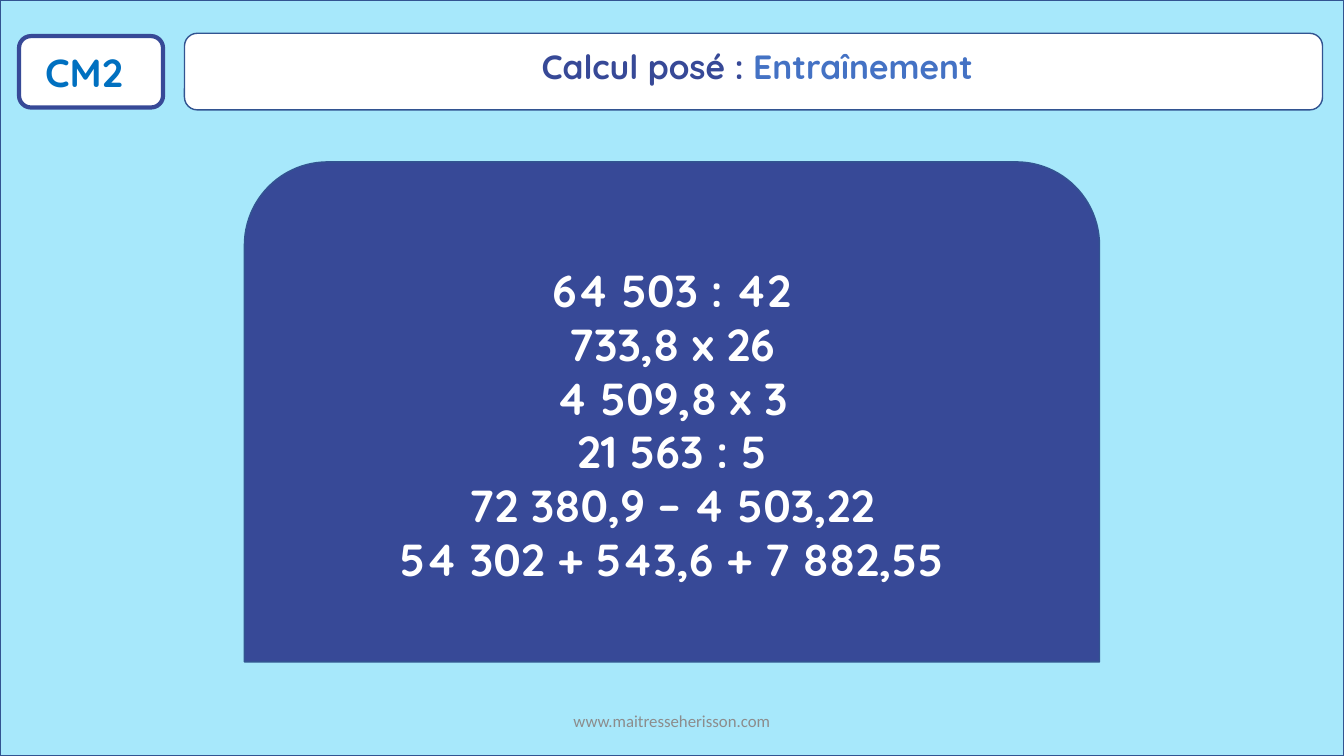
from pptx import Presentation
from pptx.dml.color import RGBColor
from pptx.enum.shapes import MSO_SHAPE
from pptx.enum.text import MSO_ANCHOR, MSO_AUTO_SIZE, PP_ALIGN
from pptx.util import Cm, Pt

LEVEL = "CM2"
TITLE = ["Calcul posé : ", "Entraînement"]
SITE = "www.maitresseherisson.com"
CALCULATIONS = [
    "64 503 : 42",
    "733,8 x 26",
    "4 509,8 x 3",
    "21 563 : 5",
    "72 380,9 – 4 503,22",
    "54 302 + 543,6 + 7 882,55",
]

WIDTH, HEIGHT = 33.87, 19.05
BOARD_WIDTH = 21.55

SKY = RGBColor(0xA7, 0xE8, 0xFB)
WHITE = RGBColor(0xFF, 0xFF, 0xFF)
NAVY = RGBColor(0x37, 0x49, 0x97)
OUTLINE = RGBColor(0x32, 0x54, 0x91)
BLUE = RGBColor(0x44, 0x72, 0xC4)
LEVEL_BLUE = RGBColor(0x00, 0x70, 0xC0)
GREY = RGBColor(0x8C, 0x8C, 0x8C)


def add_panel(page, kind, place, fill, line=OUTLINE, weight=1):
    """Add a filled, outlined shape without shadow."""
    panel = page.shapes.add_shape(kind, *map(Cm, place))
    panel.shadow.inherit = False
    panel.fill.solid()
    panel.fill.fore_color.rgb = fill
    panel.line.color.rgb = line
    panel.line.width = Pt(weight)
    return panel


def write(box, lines, size, color, align=PP_ALIGN.CENTER, anchor=MSO_ANCHOR.TOP,
          name="Quicksand", bold=True):
    """Write one paragraph per line, each line being a list of spans."""
    frame = box.text_frame
    frame.word_wrap = True
    frame.auto_size = MSO_AUTO_SIZE.NONE
    frame.vertical_anchor = anchor
    for index, spans in enumerate(lines):
        para = frame.paragraphs[0] if index == 0 else frame.add_paragraph()
        para.alignment = align
        para.font.name = name
        para.font.size = Pt(size)
        para.font.bold = bold
        para.font.color.rgb = color
        for text in spans:
            para.add_run().text = text


def main():
    """Build the calculation training slide."""
    deck = Presentation()
    deck.slide_width, deck.slide_height = Cm(WIDTH), Cm(HEIGHT)
    page = deck.slides.add_slide(deck.slide_layouts[5])
    shapes = page.shapes

    add_panel(page, MSO_SHAPE.RECTANGLE, (0, 0, WIDTH, HEIGHT), SKY)

    add_panel(page, MSO_SHAPE.ROUNDED_RECTANGLE, (0.48, 0.91, 3.63, 1.8), WHITE, NAVY, 3)
    level = shapes.add_textbox(Cm(0.89), Cm(1.09), Cm(2.8), Cm(1.45))
    write(level, [[LEVEL]], 28, LEVEL_BLUE, align=PP_ALIGN.LEFT)

    site = shapes.add_textbox(Cm(11.22), Cm(17.66), Cm(11.43), Cm(1.01))
    write(site, [[SITE]], 12, GREY, anchor=MSO_ANCHOR.MIDDLE, name="Calibri", bold=False)

    add_panel(page, MSO_SHAPE.ROUNDED_RECTANGLE, (4.65, 0.84, 28.68, 1.93), WHITE)
    title = shapes.title
    title.left, title.top, title.width, title.height = map(Cm, (4.85, 1.02, 28.47, 1.27))
    write(title, [TITLE], 24, NAVY)
    title.text_frame.paragraphs[0].runs[1].font.color.rgb = BLUE
    shapes.element.append(title.element)

    board_left = (WIDTH - BOARD_WIDTH) / 2
    board = add_panel(page, MSO_SHAPE.ROUND_2_SAME_RECTANGLE,
                      (board_left, 4.08, BOARD_WIDTH, 12.6), NAVY)
    write(board, [[line] for line in CALCULATIONS], 32, WHITE, anchor=MSO_ANCHOR.MIDDLE)

    deck.save("out.pptx")


if __name__ == "__main__":
    main()
